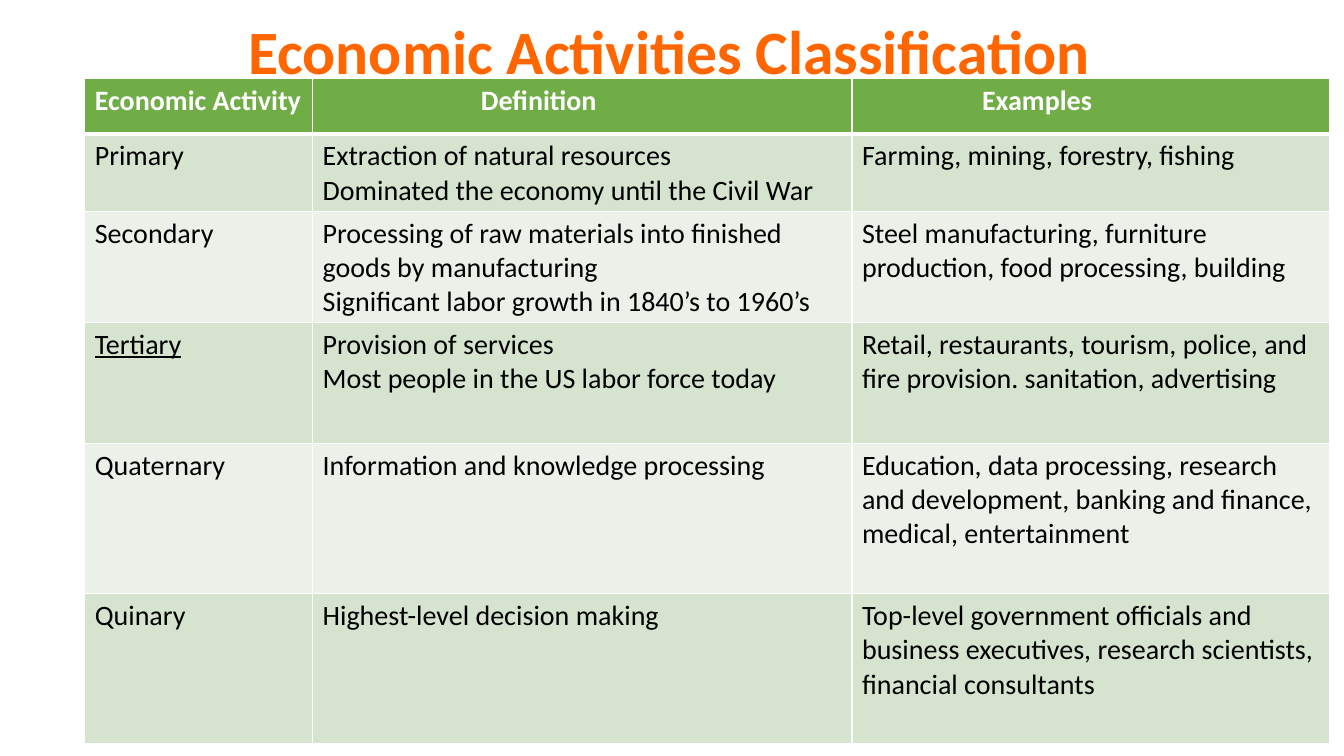
"""Build a slide with a table that classifies economic activities."""
import pptx
import pptx.dml.color
import pptx.enum.text
import pptx.oxml
import pptx.oxml.ns
import pptx.util
from pptx.util import Inches

TITLE = "Economic Activities Classification"
HEADERS = ["Economic Activity", "Definition", "Examples"]
ACTIVITIES = [
    ("Primary",
     ["Extraction of natural resources", "Dominated the economy until the Civil War"],
     "Farming, mining, forestry, fishing"),
    ("Secondary",
     ["Processing of raw materials into finished goods by manufacturing",
      "Significant labor growth in 1840’s to 1960’s"],
     "Steel manufacturing, furniture production, food processing, building"),
    ("Tertiary",
     ["Provision of services", "Most people in the US labor force today"],
     "Retail, restaurants, tourism, police, and fire provision. sanitation, advertising"),
    ("Quaternary",
     ["Information and knowledge processing"],
     "Education, data processing, research and development, banking and finance, "
     "medical, entertainment"),
    ("Quinary",
     ["Highest-level decision making"],
     "Top-level government officials and business executives, research scientists, "
     "financial consultants"),
]
UNDERLINED = {TITLE, "Tertiary"}

COLUMN_WIDTHS = [2.26, 5.35, 4.74]
ROW_HEIGHTS = [0.55, 0.77, 1.09, 1.2, 1.49, 1.49]
HEADER_MARGINS = [0.1, 1.67, 1.29]
LEFT, TABLE_TOP = 0.84, 0.78
WIDTH = sum(COLUMN_WIDTHS)
TITLE_HEIGHT, TITLE_MARGIN = 1.08, 1.62

THEME = {
    "font": "Calibri", "title_size": 44, "table_size": 20,
    "title": "FF6600", "header_text": "FFFFFF", "text": "000000",
    "header_fill": "70AD47", "bands": ["D5E3CF", "EBF1E9"],
    "border": "FFFFFF", "thin": 1, "thick": 3,
}


def color(name):
    return pptx.dml.color.RGBColor.from_string(name)


def add_text(paragraph, text, size, text_color, bold):
    run = paragraph.add_run()
    run.text = text
    run.font.name = THEME["font"]
    run.font.size = pptx.util.Pt(size)
    run.font.color.rgb = color(text_color)
    run.font.bold = bold
    run.font.underline = text in UNDERLINED


def add_borders(cell, top, bottom):
    properties = cell._tc.get_or_add_tcPr()
    sides = {"lnL": THEME["thin"], "lnR": THEME["thin"], "lnT": top, "lnB": bottom}
    for position, (side, points) in enumerate(sides.items()):
        line = pptx.oxml.parse_xml(
            f'<a:{side} {pptx.oxml.ns.nsdecls("a")} w="{pptx.util.Pt(points)}">'
            f'<a:solidFill><a:srgbClr val="{THEME["border"]}"/></a:solidFill></a:{side}>')
        properties.insert(position, line)


def add_title(slide):
    shape = slide.shapes.add_textbox(
        Inches(LEFT), Inches(0), Inches(WIDTH), Inches(TITLE_HEIGHT))
    frame = shape.text_frame
    frame.word_wrap = True
    frame.margin_left = Inches(TITLE_MARGIN)
    frame.vertical_anchor = pptx.enum.text.MSO_ANCHOR.MIDDLE
    paragraph = frame.paragraphs[0]
    paragraph.line_spacing = 0.9
    add_text(paragraph, TITLE, THEME["title_size"], THEME["title"], True)


def fill_cell(cell, content, row, column):
    header = row == 0
    fill = THEME["header_fill"] if header else THEME["bands"][(row - 1) % 2]
    cell.fill.solid()
    cell.fill.fore_color.rgb = color(fill)
    if header:
        cell.margin_left = Inches(HEADER_MARGINS[column])
    add_borders(cell, THEME["thick" if row == 1 else "thin"],
                THEME["thick" if header else "thin"])
    lines = [content] if isinstance(content, str) else content
    frame = cell.text_frame
    for index, line in enumerate(lines):
        paragraph = frame.add_paragraph() if index else frame.paragraphs[0]
        add_text(paragraph, line, THEME["table_size"],
                 THEME["header_text" if header else "text"], header)


def add_activity_table(slide):
    rows = [HEADERS, *ACTIVITIES]
    table = slide.shapes.add_table(
        len(rows), len(HEADERS), Inches(LEFT), Inches(TABLE_TOP),
        Inches(WIDTH), Inches(sum(ROW_HEIGHTS))).table
    for column, width in zip(table.columns, COLUMN_WIDTHS):
        column.width = Inches(width)
    for row, height in zip(table.rows, ROW_HEIGHTS):
        row.height = Inches(height)
    for row_index, contents in enumerate(rows):
        for column_index, content in enumerate(contents):
            fill_cell(table.cell(row_index, column_index), content, row_index, column_index)


def main():
    presentation = pptx.Presentation()
    presentation.slide_width = Inches(13.33)
    presentation.slide_height = Inches(7.5)
    slide = presentation.slides.add_slide(presentation.slide_layouts[6])
    add_title(slide)
    add_activity_table(slide)
    presentation.save("out.pptx")


if __name__ == "__main__":
    main()
